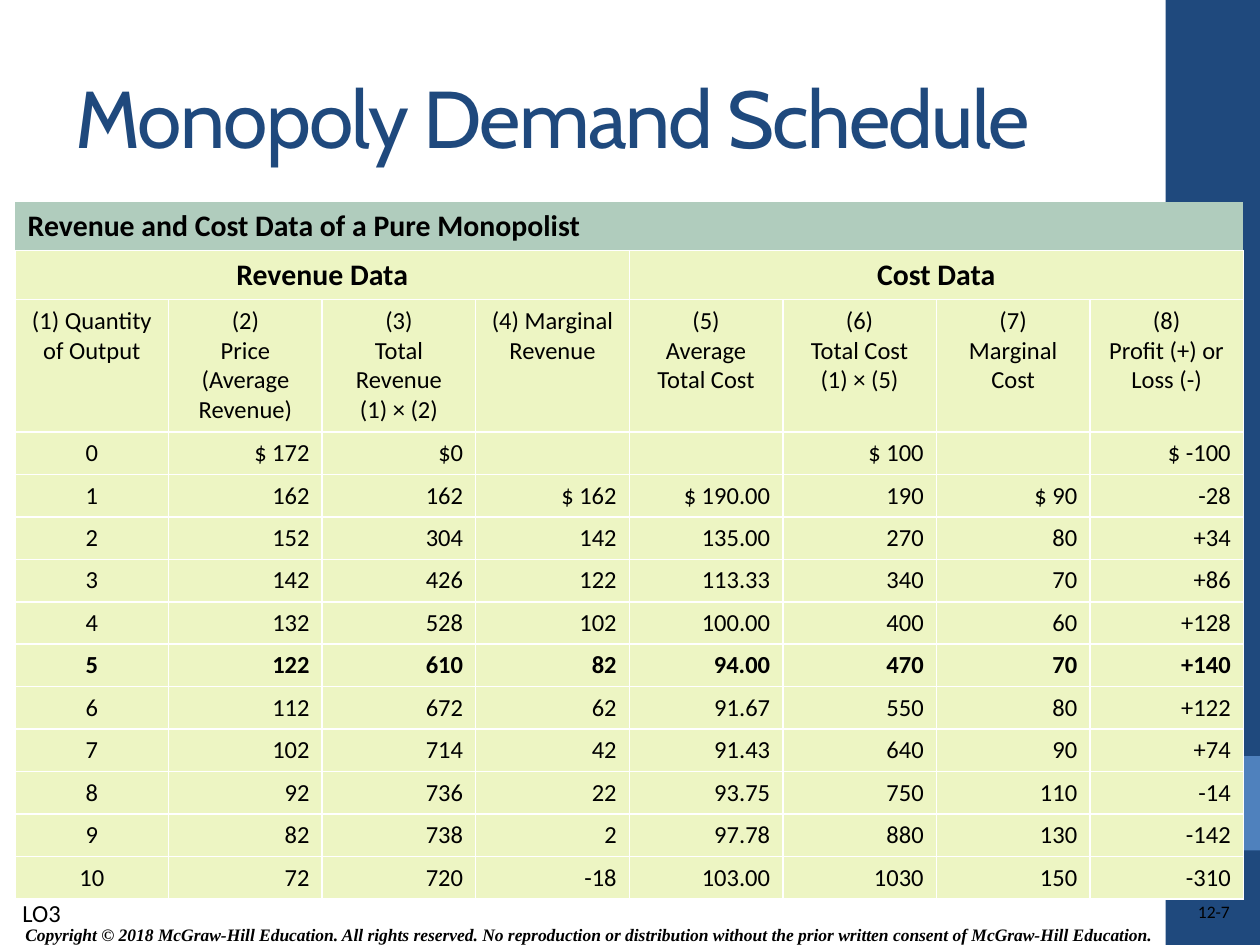
from lxml import etree
from pptx import Presentation
from pptx import util as u
from pptx.dml.color import RGBColor
from pptx.enum import shapes, text
from pptx.oxml import ns

NAVY = RGBColor(0x1F, 0x49, 0x7D)
BLUE = RGBColor(0x4F, 0x81, 0xBD)
SAGE = RGBColor(0xB0, 0xCC, 0xBD)
LIME = RGBColor(0xED, 0xF5, 0xC3)
BLACK = RGBColor(0, 0, 0)

LEFT, CENTER, RIGHT = text.PP_ALIGN.LEFT, text.PP_ALIGN.CENTER, text.PP_ALIGN.RIGHT
TOP, MIDDLE, BOTTOM = (text.MSO_ANCHOR.TOP, text.MSO_ANCHOR.MIDDLE,
                       text.MSO_ANCHOR.BOTTOM)

COPYRIGHT = ("Copyright © 2018 McGraw-Hill Education. All rights reserved. "
             "No reproduction or distribution without the prior written "
             "consent of McGraw-Hill Education.")
HEADINGS = [
    "(1) Quantity of Output",
    "(2)\nPrice (Average Revenue)",
    "(3)\nTotal Revenue\n(1) × (2)",
    "(4) Marginal Revenue",
    "(5)\nAverage Total Cost",
    "(6)\nTotal Cost\n(1) × (5)",
    "(7)\nMarginal Cost",
    "(8)\nProfit (+) or\nLoss (-)",
]
SCHEDULE = [
    ["0", "$ 172", "$0", "", "", "$ 100", "", "$ -100"],
    ["1", "162", "162", "$ 162", "$ 190.00", "190", "$ 90", "-28"],
    ["2", "152", "304", "142", "135.00", "270", "80", "+34"],
    ["3", "142", "426", "122", "113.33", "340", "70", "+86"],
    ["4", "132", "528", "102", "100.00", "400", "60", "+128"],
    ["5", "122", "610", "82", "94.00", "470", "70", "+140"],
    ["6", "112", "672", "62", "91.67", "550", "80", "+122"],
    ["7", "102", "714", "42", "91.43", "640", "90", "+74"],
    ["8", "92", "736", "22", "93.75", "750", "110", "-14"],
    ["9", "82", "738", "2", "97.78", "880", "130", "-142"],
    ["10", "72", "720", "-18", "103.00", "1030", "150", "-310"],
]
BEST_OUTPUT = "5"
COLUMN_ANCHORS = [TOP, BOTTOM, BOTTOM, TOP] + [MIDDLE] * 4


def write(frame, words, size=14, font="Calibri", color=BLACK, bold=False,
          italic=False, align=LEFT, line_spacing=None, tracking=None):
    """Fill a text frame, one paragraph for each line of words."""
    for index, line in enumerate(words.split("\n")):
        para = frame.paragraphs[0] if index == 0 else frame.add_paragraph()
        para.alignment = align
        if line_spacing:
            para.line_spacing = line_spacing
        if not line:
            # An empty cell still needs its size, or its row grows
            etree.SubElement(para._p, ns.qn("a:endParaRPr"), sz=str(size * 100))
            continue
        span = para.add_run()
        span.text = line
        span.font.size, span.font.name = u.Pt(size), font
        span.font.bold, span.font.italic = bold, italic
        span.font.color.rgb = color
        if tracking is not None:
            span._r.get_or_add_rPr().set("spc", str(tracking))


def add_label(page, box, words, anchor=TOP, margins=(0.1, 0.05), **style):
    label = page.shapes.add_textbox(*map(u.Inches, box))
    frame = label.text_frame
    frame.word_wrap = True
    frame.vertical_anchor = anchor
    frame.margin_left = frame.margin_right = u.Inches(margins[0])
    frame.margin_top = frame.margin_bottom = u.Inches(margins[1])
    write(frame, words, **style)


def add_band(page, box, color):
    band = page.shapes.add_shape(shapes.MSO_SHAPE.RECTANGLE, *map(u.Inches, box))
    band.shadow.inherit = False
    band.fill.solid()
    band.fill.fore_color.rgb = color
    band.line.fill.background()


def add_sidebar(page, left, top, width, height):
    add_band(page, (left, top, width, height), NAVY)
    add_band(page, (left, top + 0.8 * height, width, 0.1 * height), BLUE)


def set_borders(cell, visible):
    properties = cell._tc.get_or_add_tcPr()
    for side in ("lnL", "lnR", "lnT", "lnB"):
        line = etree.SubElement(properties, ns.qn("a:" + side), w=str(u.Pt(1)))
        if visible:
            fill = etree.SubElement(line, ns.qn("a:solidFill"))
            etree.SubElement(fill, ns.qn("a:srgbClr"), val="FFFFFF")
        else:
            etree.SubElement(line, ns.qn("a:noFill"))


def add_schedule(page, left, top, width, height):
    rows, columns = len(SCHEDULE) + 3, len(HEADINGS)
    frame = page.shapes.add_table(rows, columns,
                                  *map(u.Inches, (left, top, width, height)))
    table = frame.table
    table.first_row = table.horz_banding = False
    for column in table.columns:
        column.width = u.Inches(width / columns)
    row_heights = [0.38, 0.38, 1.05] + [0.33] * len(SCHEDULE)
    for index, (row, row_height) in enumerate(zip(table.rows, row_heights)):
        row.height = u.Inches(row_height)
        for cell in row.cells:
            set_borders(cell, visible=index > 0)
            cell.fill.solid()
            cell.fill.fore_color.rgb = LIME if index else SAGE

    # Caption and the two group headings
    half = columns // 2
    for row, first, last, words, align in [
            (0, 0, columns - 1, "Revenue and Cost Data of a Pure Monopolist", LEFT),
            (1, 0, half - 1, "Revenue Data", CENTER),
            (1, half, columns - 1, "Cost Data", CENTER)]:
        cell = table.cell(row, first)
        cell.merge(table.cell(row, last))
        cell.vertical_anchor = TOP if row else BOTTOM
        write(cell.text_frame, words, size=17, bold=True, align=align)

    # Column headings
    for column, words in enumerate(HEADINGS):
        write(table.cell(2, column).text_frame, words, align=CENTER)

    # Figures, with the most profitable output in bold
    for row, values in enumerate(SCHEDULE, start=3):
        for column, value in enumerate(values):
            cell = table.cell(row, column)
            cell.vertical_anchor = COLUMN_ANCHORS[column]
            write(cell.text_frame, value, bold=values[0] == BEST_OUTPUT,
                  align=RIGHT if column else CENTER)


def add_footer(page, left, top, width, height):
    add_label(page, (left, top + 0.2, width - 0.48, height - 0.2), COPYRIGHT,
              anchor=MIDDLE, size=10, font="Times New Roman", bold=True,
              italic=True, align=CENTER)
    add_label(page, (left + width - 1.95, top + 0.07, 1.95, 0.2), "12-7",
              margins=(0, 0), size=10, align=RIGHT, line_spacing=1.02)
    add_label(page, (left + 0.02, top, 0.55, 0.34), "LO3")


def main():
    deck = Presentation()
    deck.slide_width, deck.slide_height = u.Inches(10), u.Inches(7.5)
    page = deck.slides.add_slide(deck.slide_layouts[6])
    add_sidebar(page, 9.25, 0, 0.75, 7.5)
    add_schedule(page, 0.12, 1.6, 9.75, 5.47)
    add_label(page, (0.5, 0.3, 8.33, 1.25), "Monopoly Demand Schedule",
              anchor=MIDDLE, size=46, font="Cabin", color=NAVY, tracking=-100)
    add_footer(page, 0.06, 7.08, 9.7, 0.48)
    deck.save("out.pptx")


if __name__ == "__main__":
    main()
